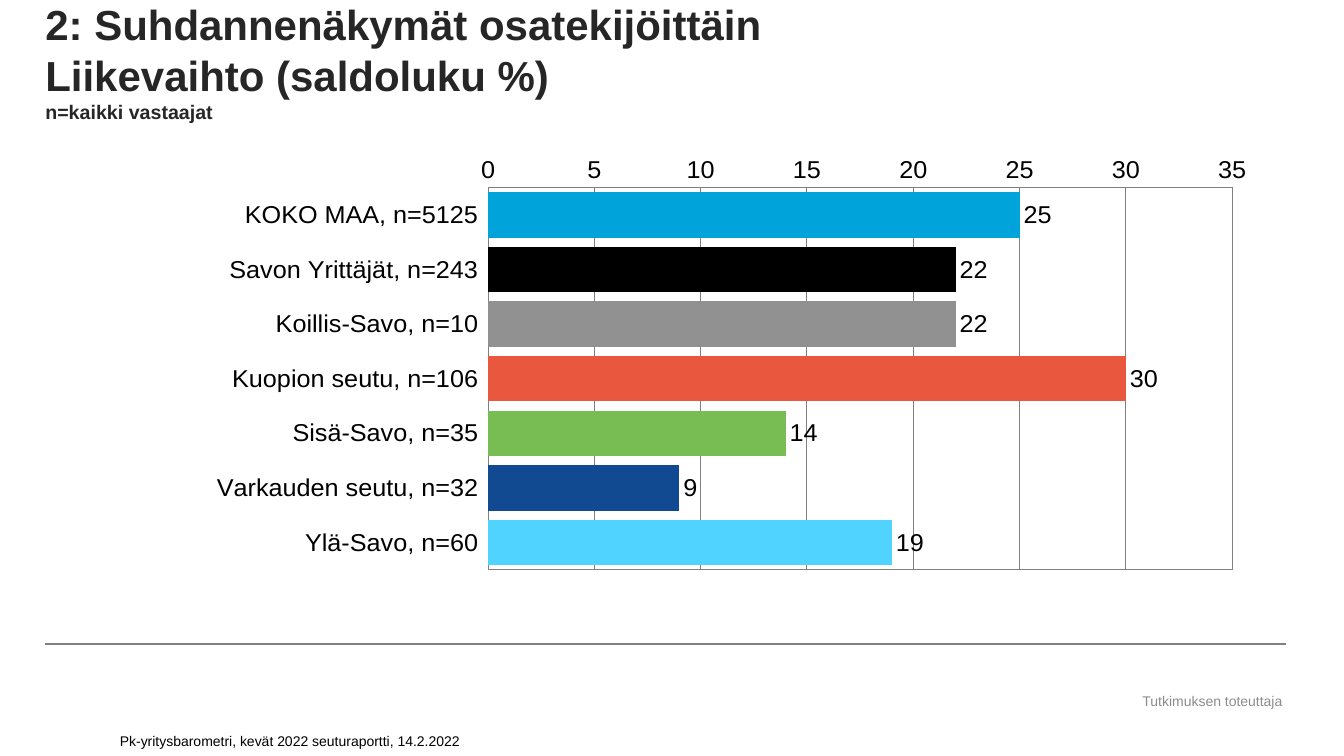
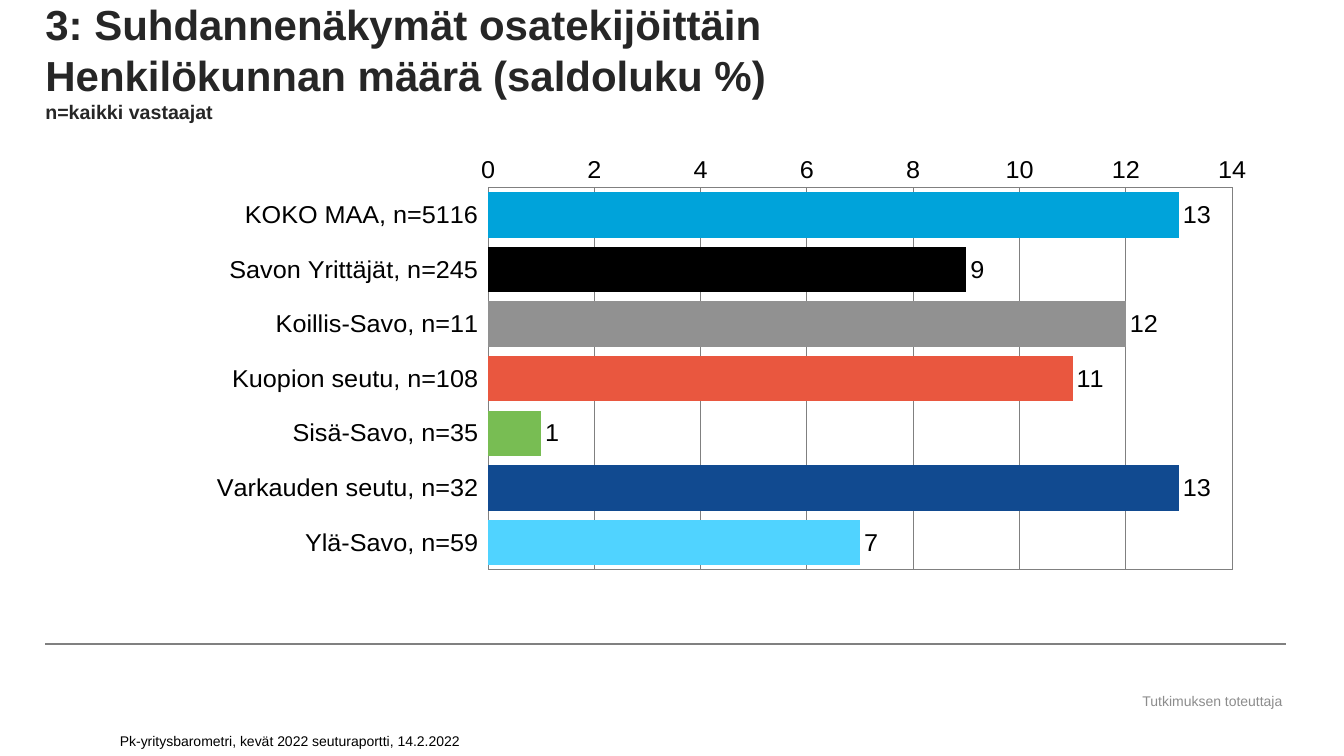
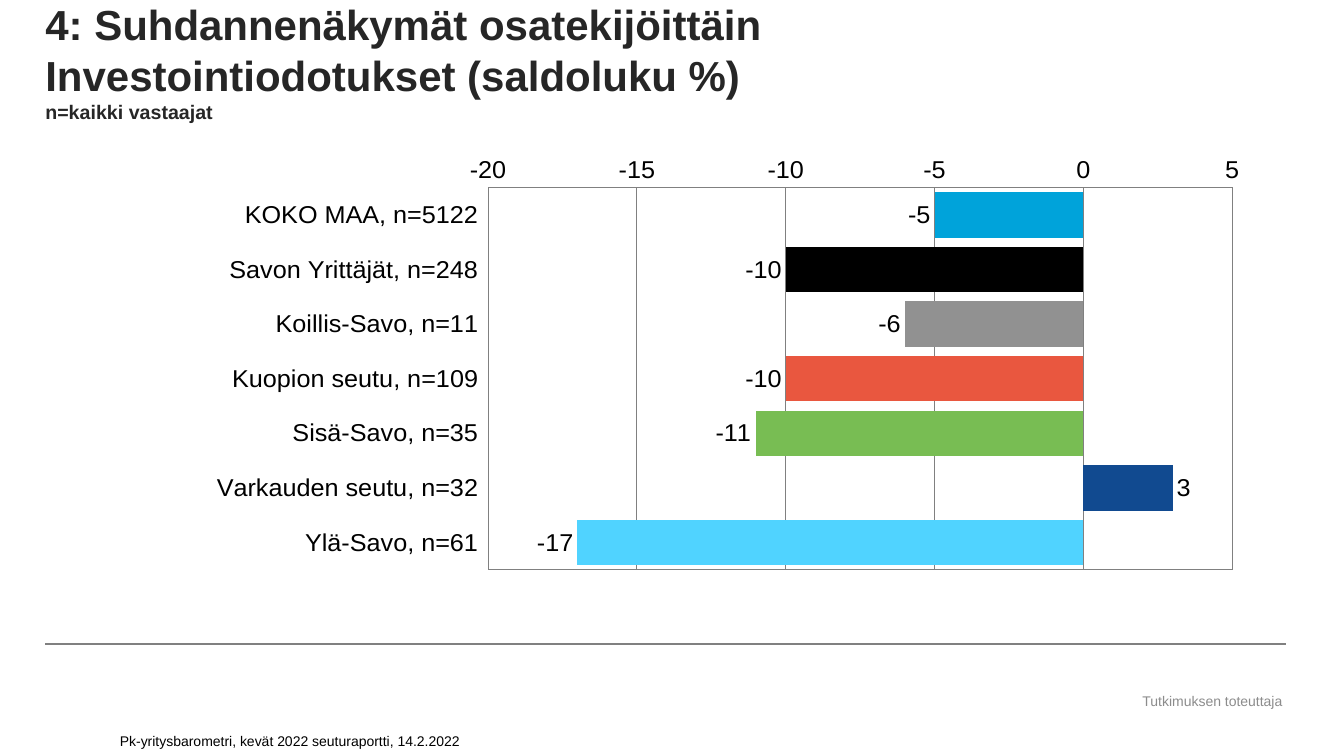
from dataclasses import dataclass

from lxml import etree
from pptx import Presentation
from pptx import util as u
from pptx.chart import data as chart_data
from pptx.dml.color import RGBColor
from pptx.enum import chart as chart_enum
from pptx.enum import shapes, text
from pptx.oxml import parse_xml
from pptx.oxml.ns import nsdecls, qn

FONT = "Arial"
BLACK, TITLE_COLOR, NOTE_COLOR, LINE_COLOR = "000000", "262626", "8C8C8C", "808080"
BAR_COLORS = ("00A3DA", BLACK, "919191", "E9573F", "78BD53", "114A90", "50D3FF")
REGIONS = ("KOKO MAA", "Savon Yrittäjät", "Koillis-Savo", "Kuopion seutu",
           "Sisä-Savo", "Varkauden seutu", "Ylä-Savo")
WIDTH, HEIGHT = 13.33, 7.5
MARGIN = 0.45
CONTENT_WIDTH = 12.3
RULE_TOP = 6.39
PLOT_SHARES = {"x": 0.357, "y": 0.033, "w": 0.6, "h": 0.832}


@dataclass(frozen=True)
class Box:
    left: float
    top: float
    width: float
    height: float

    def lengths(self) -> tuple:
        return tuple(u.Inches(v) for v in (self.left, self.top, self.width, self.height))


@dataclass(frozen=True)
class Outlook:
    number: int
    topic: str
    respondents: tuple[int, ...]
    balances: tuple[int, ...]
    minimum: int
    maximum: int
    step: int


TITLE_BOX = Box(MARGIN, 0, CONTENT_WIDTH, 1.22)
CHART_BOX = Box(MARGIN, 1.55, CONTENT_WIDTH, 4.72)
PROVIDER_BOX = Box(11.16, 6.82, 1.73, 0.26)
FOOTER_BOX = Box(1.09, 7.13, 5.41, 0.35)

OUTLOOKS = (
    Outlook(2, "Liikevaihto", (5125, 243, 10, 106, 35, 32, 60),
            (25, 22, 22, 30, 14, 9, 19), 0, 35, 5),
    Outlook(3, "Henkilökunnan määrä", (5116, 245, 11, 108, 35, 32, 59),
            (13, 9, 12, 11, 1, 13, 7), 0, 14, 2),
    Outlook(4, "Investointiodotukset", (5122, 248, 11, 109, 35, 32, 61),
            (-5, -10, -6, -10, -11, 3, -17), -20, 5, 5),
)


def rgb(value: str) -> RGBColor:
    return RGBColor.from_string(value)


def style_font(font, size: float, color: str, bold: bool = False) -> None:
    font.name = FONT
    font.size = u.Pt(size)
    font.bold = bold
    font.color.rgb = rgb(color)


def add_text_frame(slide, box: Box, anchor):
    frame = slide.shapes.add_textbox(*box.lengths()).text_frame
    frame.word_wrap = True
    frame.vertical_anchor = anchor
    return frame


def add_label(slide, box: Box, label: str, color: str, anchor, alignment) -> None:
    paragraph = add_text_frame(slide, box, anchor).paragraphs[0]
    paragraph.text = label
    paragraph.alignment = alignment
    style_font(paragraph.font, 10, color)


def add_title(slide, outlook: Outlook) -> None:
    frame = add_text_frame(slide, TITLE_BOX, text.MSO_ANCHOR.BOTTOM)
    frame.margin_left = frame.margin_top = frame.margin_right = frame.margin_bottom = 0
    lines = ((f"{outlook.number}: Suhdannenäkymät osatekijöittäin", 30),
             (f"{outlook.topic} (saldoluku %)", 30),
             ("n=kaikki vastaajat", 14))
    for index, (line, size) in enumerate(lines):
        paragraph = frame.add_paragraph() if index else frame.paragraphs[0]
        paragraph.text = line
        style_font(paragraph.font, size, TITLE_COLOR, bold=True)


def add_frame(slide) -> None:
    add_label(slide, PROVIDER_BOX, "Tutkimuksen toteuttaja", NOTE_COLOR,
              text.MSO_ANCHOR.MIDDLE, text.PP_ALIGN.CENTER)
    add_label(slide, FOOTER_BOX, "Pk-yritysbarometri, kevät 2022 seuturaportti, 14.2.2022",
              BLACK, text.MSO_ANCHOR.BOTTOM, text.PP_ALIGN.LEFT)
    rule = slide.shapes.add_connector(
        shapes.MSO_CONNECTOR.STRAIGHT, u.Inches(MARGIN), u.Inches(RULE_TOP),
        u.Inches(MARGIN + CONTENT_WIDTH), u.Inches(RULE_TOP))
    rule.line.color.rgb = rgb(LINE_COLOR)
    rule.line.width = u.Pt(1.5)
    etree.SubElement(rule._element.spPr, qn("a:effectLst"))


def set_plot_area(chart) -> None:
    area = chart._chartSpace.chart.plotArea
    for layout in area.findall(qn("c:layout")):
        area.remove(layout)
    shares = "".join(f'<c:{name} val="{share}"/>' for name, share in PLOT_SHARES.items())
    area.insert(0, parse_xml(
        f'<c:layout {nsdecls("c")}><c:manualLayout><c:layoutTarget val="inner"/>'
        f'<c:xMode val="edge"/><c:yMode val="edge"/>{shares}</c:manualLayout></c:layout>'))
    area.append(parse_xml(
        f'<c:spPr {nsdecls("c", "a")}><a:noFill/><a:ln w="9525"><a:solidFill>'
        f'<a:srgbClr val="{LINE_COLOR}"/></a:solidFill></a:ln></c:spPr>'))


def style_line(line) -> None:
    line.color.rgb = rgb(LINE_COLOR)
    line.width = u.Pt(0.75)


def add_balance_chart(slide, outlook: Outlook) -> None:
    data = chart_data.CategoryChartData(number_format="#,##0")
    data.categories = [f"{region}, n={count}"
                       for region, count in zip(REGIONS, outlook.respondents)]
    data.add_series("Series 1", outlook.balances)
    chart = slide.shapes.add_chart(
        chart_enum.XL_CHART_TYPE.BAR_CLUSTERED, *CHART_BOX.lengths(), data).chart
    chart.has_legend = False
    chart.has_title = False
    style_font(chart.font, 18, BLACK)

    for axis in (chart.category_axis, chart.value_axis):
        axis.major_tick_mark = axis.minor_tick_mark = chart_enum.XL_TICK_MARK.NONE
        axis.tick_label_position = chart_enum.XL_TICK_LABEL_POSITION.LOW
        style_line(axis.format.line)
    chart.category_axis.reverse_order = True
    chart.category_axis.crosses = chart_enum.XL_AXIS_CROSSES.MAXIMUM
    values = chart.value_axis
    values.tick_label_position = chart_enum.XL_TICK_LABEL_POSITION.NEXT_TO_AXIS
    values.minimum_scale, values.maximum_scale = outlook.minimum, outlook.maximum
    values.major_unit = outlook.step
    values.has_major_gridlines = True
    style_line(values.major_gridlines.format.line)

    plot = chart.plots[0]
    plot.gap_width = 20
    plot.vary_by_categories = False
    plot.has_data_labels = True
    labels = plot.data_labels
    labels.show_value = True
    labels.position = chart_enum.XL_LABEL_POSITION.OUTSIDE_END
    labels.number_format = "#,##0"
    labels.number_format_is_linked = False
    series = plot.series[0]
    series.invert_if_negative = False
    for index, color in enumerate(BAR_COLORS):
        fill = series.points[index].format.fill
        fill.solid()
        fill.fore_color.rgb = rgb(color)
    set_plot_area(chart)


def main() -> None:
    presentation = Presentation()
    presentation.slide_width = u.Inches(WIDTH)
    presentation.slide_height = u.Inches(HEIGHT)
    for outlook in OUTLOOKS:
        slide = presentation.slides.add_slide(presentation.slide_layouts[6])
        add_frame(slide)
        add_title(slide, outlook)
        add_balance_chart(slide, outlook)
    presentation.save("out.pptx")


if __name__ == "__main__":
    main()
